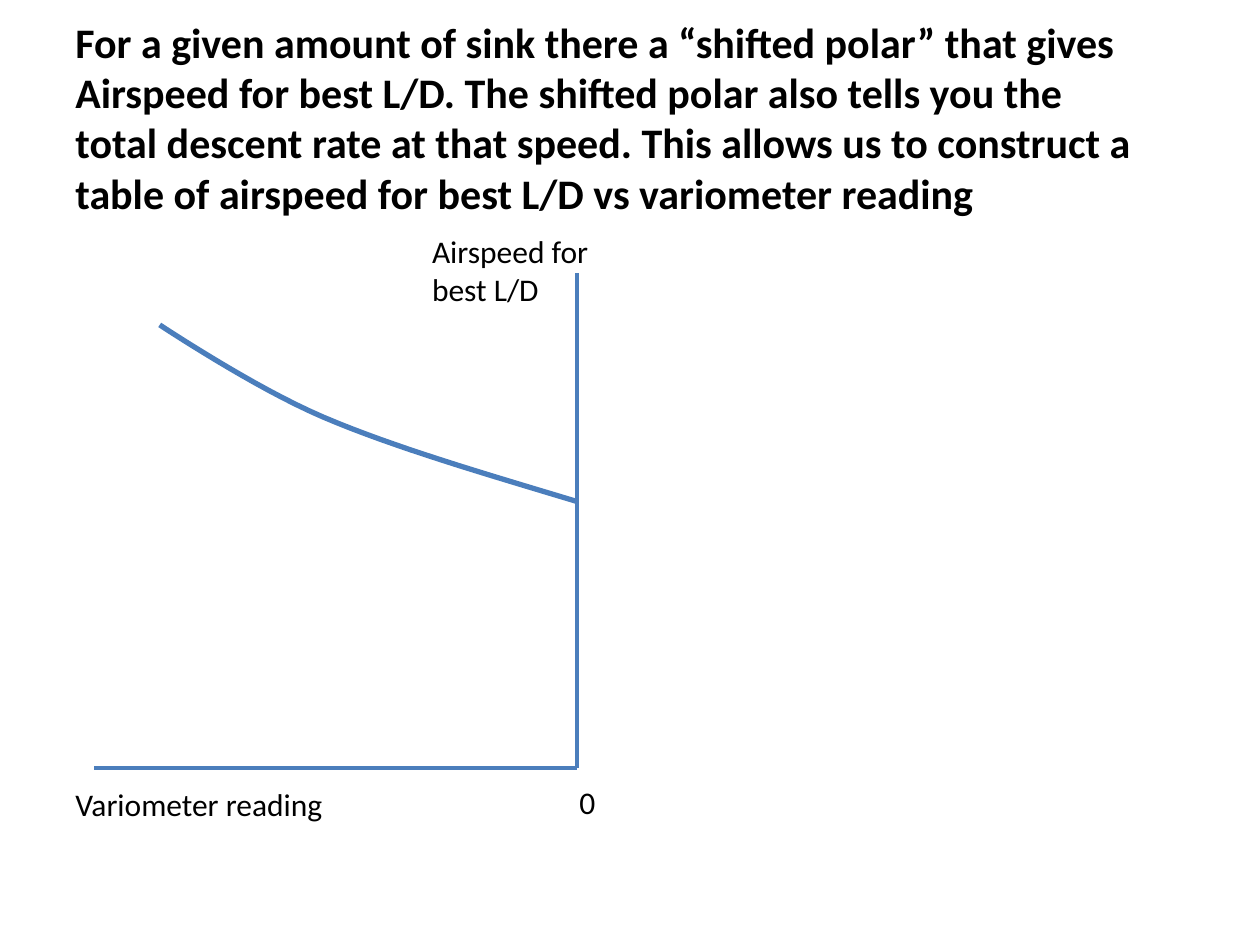
from lxml.etree import SubElement
from pptx import Presentation
from pptx.dml.color import RGBColor
from pptx.enum.shapes import MSO_CONNECTOR as Conn
from pptx.enum.text import MSO_AUTO_SIZE as Fit
from pptx.oxml.ns import qn
from pptx.util import Cm, Pt

COLORS = {"text": "000000", "line": "4B7EBC"}
TITLE = (
    "For a given amount of sink there a “shifted polar” that gives "
    "Airspeed for best L/D. The shifted polar also tells you the total "
    "descent rate at that speed. This allows us to construct a table of "
    "airspeed for best L/D vs variometer reading"
)
# Two cubic curves sharing an end, in cm from the corner of the graph
CURVES = [
    [(9.73, 4.6), (7.87, 4.04), (6.05, 3.51), (4.62, 2.9)],
    [(4.62, 2.9), (3.23, 2.31), (1.32, 1.04), (1.32, 1.04)],
]
STEPS = 16


def color(name):
    return RGBColor.from_string(COLORS[name])


def add_text(slide, box, text, size=18, bold=False, wrap=True):
    frame = slide.shapes.add_textbox(*map(Cm, box)).text_frame
    frame.word_wrap = wrap
    frame.auto_size = Fit.SHAPE_TO_FIT_TEXT
    para = frame.paragraphs[0]
    para.text = text
    font = para.font
    font.name, font.size, font.bold = "Calibri", Pt(size), bold
    font.color.rgb = color("text")


def style_line(line, width):
    line.color.rgb = color("line")
    line.width = Pt(width)


def add_axis(slide, start, end):
    axis = slide.shapes.add_connector(Conn.STRAIGHT, *map(Cm, start + end))
    style_line(axis.line, 2.25)
    SubElement(axis._element.spPr, qn("a:effectLst"))


def bezier(nodes, t):
    weights = ((1 - t) ** 3, 3 * t * (1 - t) ** 2, 3 * t**2 * (1 - t), t**3)
    return tuple(sum(w * n[i] for w, n in zip(weights, nodes)) for i in (0, 1))


def add_curve(slide, left, top):
    points = [CURVES[0][0]]
    for nodes in CURVES:
        points += [bezier(nodes, i / STEPS) for i in range(1, STEPS + 1)]
    points = [(Cm(left + x), Cm(top + y)) for x, y in points]
    path = slide.shapes.build_freeform(*points[0])
    path.add_line_segments(points[1:], close=False)
    curve = path.convert_to_shape()
    curve.shadow.inherit = False
    curve.fill.background()
    style_line(curve.line, 3)


def add_graph(slide, left, top, width, height):
    right, base = left + width, top + height
    # Labels
    add_text(slide, (left + 6.56, top - 0.96, 3.81, 1.8),
             "Airspeed for best L/D")
    add_text(slide, (left - 0.63, base + 0.21, 5.56, 1.02),
             "Variometer reading", wrap=False)
    add_text(slide, (right - 0.2, base + 0.18, 0.84, 1.02), "0", wrap=False)
    # Axes meet at the lower right
    add_axis(slide, (right, top), (right, base))
    add_axis(slide, (right, base), (left, base))
    add_curve(slide, left, top)


def main():
    prs = Presentation()
    prs.slide_width, prs.slide_height = Cm(25.4), Cm(19.05)
    slide = prs.slides.add_slide(prs.slide_layouts[6])
    add_graph(slide, 1.9, 5.51, 9.73, 9.98)
    add_text(slide, (1.27, 0.2, 21.8, 4.37), TITLE, size=24, bold=True)
    prs.save("out.pptx")


if __name__ == "__main__":
    main()
